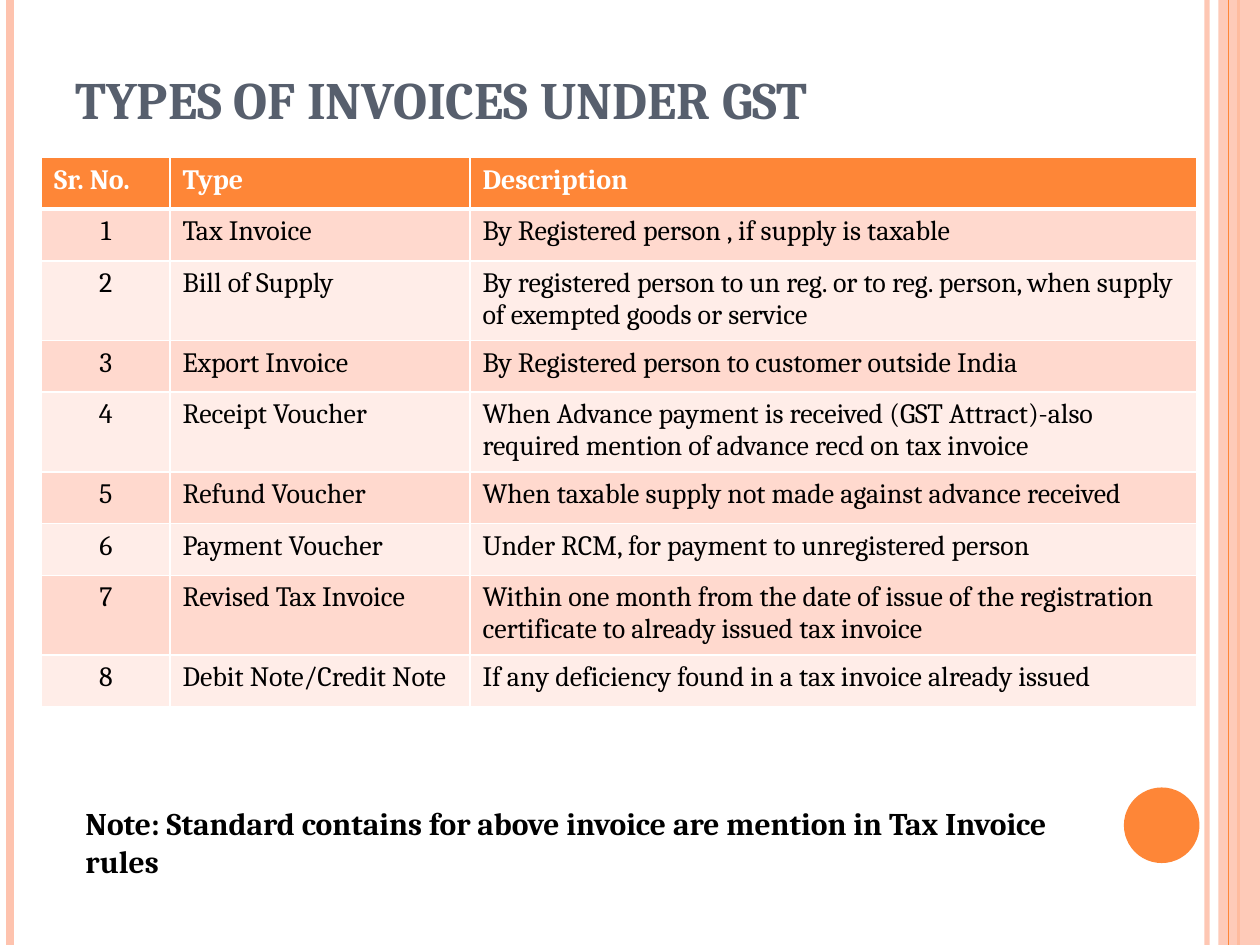
from lxml.etree import SubElement
from pptx import Presentation
from pptx.dml.color import RGBColor
from pptx.enum.shapes import MSO_CONNECTOR, MSO_SHAPE
from pptx.enum.text import MSO_ANCHOR, PP_ALIGN
from pptx.oxml.ns import qn
from pptx.util import Inches, Pt

ORANGE = RGBColor(0xFE, 0x86, 0x37)
PEACH = RGBColor(0xFE, 0xC3, 0xAE)
SLATE = RGBColor(0x57, 0x5F, 0x6D)
BLACK = RGBColor(0, 0, 0)
WHITE = RGBColor(0xFF, 0xFF, 0xFF)
BANDS = (RGBColor(0xFF, 0xED, 0xE8), RGBColor(0xFF, 0xD9, 0xCE))
FONT = "Cambria"

TITLE = "TYPES OF INVOICES UNDER GST"
NOTE = "Note: Standard contains for above invoice are mention in Tax Invoice rules"
HEADER = ("Sr. No.", "Type", "Description")
INVOICES = [
    ("Tax Invoice", "By Registered person , if supply is taxable"),
    ("Bill of Supply", "By registered person to un reg. or to reg. person, "
     "when supply of exempted goods or service"),
    ("Export Invoice", "By Registered person to customer outside India"),
    ("Receipt Voucher", "When Advance payment is received (GST Attract)-also "
     "required mention of advance recd on tax invoice"),
    ("Refund Voucher", "When taxable supply not made against advance received"),
    ("Payment Voucher", "Under RCM, for payment to unregistered person"),
    ("Revised Tax Invoice", "Within one month from the date of issue of the "
     "registration certificate to already issued tax invoice"),
    ("Debit Note/Credit Note", "If any deficiency found in a tax invoice already issued"),
]
COLUMN_WIDTHS = (1.02, 2.38, 5.77)
ROW_HEIGHT, TWO_LINE_HEIGHT = 0.41, 0.61
LINE_CAPACITY = 60  # characters that fit on one description line

# x, colour, width in points, opacity in percent
BACK_RULES = [(9.58, PEACH, 3, 93), (0.08, PEACH, 4.5, 100), (9.83, ORANGE, 1.5, 100)]
FRONT_RULES = [(9.75, ORANGE, 0.75, 100)]


def set_opacity(properties, percent):
    color = properties.find(".//" + qn("a:srgbClr"))
    SubElement(color, qn("a:alpha")).set("val", str(percent * 1000))


def add_rules(slide, rules):
    for x, color, width, opacity in rules:
        rule = slide.shapes.add_connector(
            MSO_CONNECTOR.STRAIGHT, Inches(x), 0, Inches(x), Inches(7.5))
        rule.line.color.rgb = color
        rule.line.width = Pt(width)
        properties = rule._element.spPr
        if opacity < 100:
            set_opacity(properties, opacity)
        SubElement(properties, qn("a:effectLst"))


def add_filled_shape(slide, kind, box, color):
    shape = slide.shapes.add_shape(kind, *map(Inches, box))
    shape.shadow.inherit = False
    shape.fill.solid()
    shape.fill.fore_color.rgb = color
    shape.line.fill.background()
    return shape


def write(text_frame, text, size, color, bold=False, align=PP_ALIGN.LEFT):
    text_frame.word_wrap = True
    paragraph = text_frame.paragraphs[0]
    paragraph.text = text
    paragraph.alignment = align
    font = paragraph.font
    font.name, font.size, font.bold = FONT, Pt(size), bold
    font.color.rgb = color


def add_text(slide, box, text, size, color, anchor):
    text_frame = slide.shapes.add_textbox(*map(Inches, box)).text_frame
    text_frame.vertical_anchor = anchor
    write(text_frame, text, size, color, bold=True)


def set_borders(cell, bottom):
    properties = cell._tc.get_or_add_tcPr()
    widths = {"a:lnL": 1, "a:lnR": 1, "a:lnT": 1, "a:lnB": bottom}
    for index, (tag, width) in enumerate(widths.items()):
        line = SubElement(properties, qn(tag))
        line.set("w", str(Pt(width)))
        fill = SubElement(line, qn("a:solidFill"))
        SubElement(fill, qn("a:srgbClr")).set("val", str(WHITE))
        properties.insert(index, line)  # borders come before the fill


def add_invoice_table(slide):
    rows = [HEADER] + [(str(n), *invoice) for n, invoice in enumerate(INVOICES, 1)]
    table = slide.shapes.add_table(
        len(rows), len(HEADER), Inches(0.33), Inches(1.25),
        Inches(sum(COLUMN_WIDTHS)), Inches(ROW_HEIGHT * len(rows))).table
    for column, width in zip(table.columns, COLUMN_WIDTHS):
        column.width = Inches(width)
    for r, values in enumerate(rows):
        is_header = r == 0
        is_long = len(values[-1]) > LINE_CAPACITY
        table.rows[r].height = Inches(TWO_LINE_HEIGHT if is_long else ROW_HEIGHT)
        for c, text in enumerate(values):
            cell = table.cell(r, c)
            cell.fill.solid()
            cell.fill.fore_color.rgb = ORANGE if is_header else BANDS[r % 2]
            set_borders(cell, bottom=3 if is_header else 1)
            centred = c == 0 and not is_header
            write(cell.text_frame, text, 16, WHITE if is_header else BLACK,
                  is_header, PP_ALIGN.CENTER if centred else PP_ALIGN.LEFT)


def main():
    presentation = Presentation()
    presentation.slide_width, presentation.slide_height = Inches(10), Inches(7.5)
    slide = presentation.slides.add_slide(presentation.slide_layouts[6])

    # Side decoration
    add_rules(slide, BACK_RULES)
    band = add_filled_shape(slide, MSO_SHAPE.RECTANGLE, (9.67, 0, 0.33, 7.5), PEACH)
    set_opacity(band._element.spPr, 87)
    add_rules(slide, FRONT_RULES)
    add_filled_shape(slide, MSO_SHAPE.OVAL, (8.92, 6.25, 0.6, 0.6), ORANGE)

    # Title, table and note
    add_text(slide, (0.5, 0.3, 8.17, 0.78), TITLE, 30, SLATE, MSO_ANCHOR.BOTTOM)
    add_invoice_table(slide)
    add_text(slide, (0.58, 6.33, 8.42, 0.71), NOTE, 18, BLACK, MSO_ANCHOR.TOP)

    presentation.save("out.pptx")


if __name__ == "__main__":
    main()
